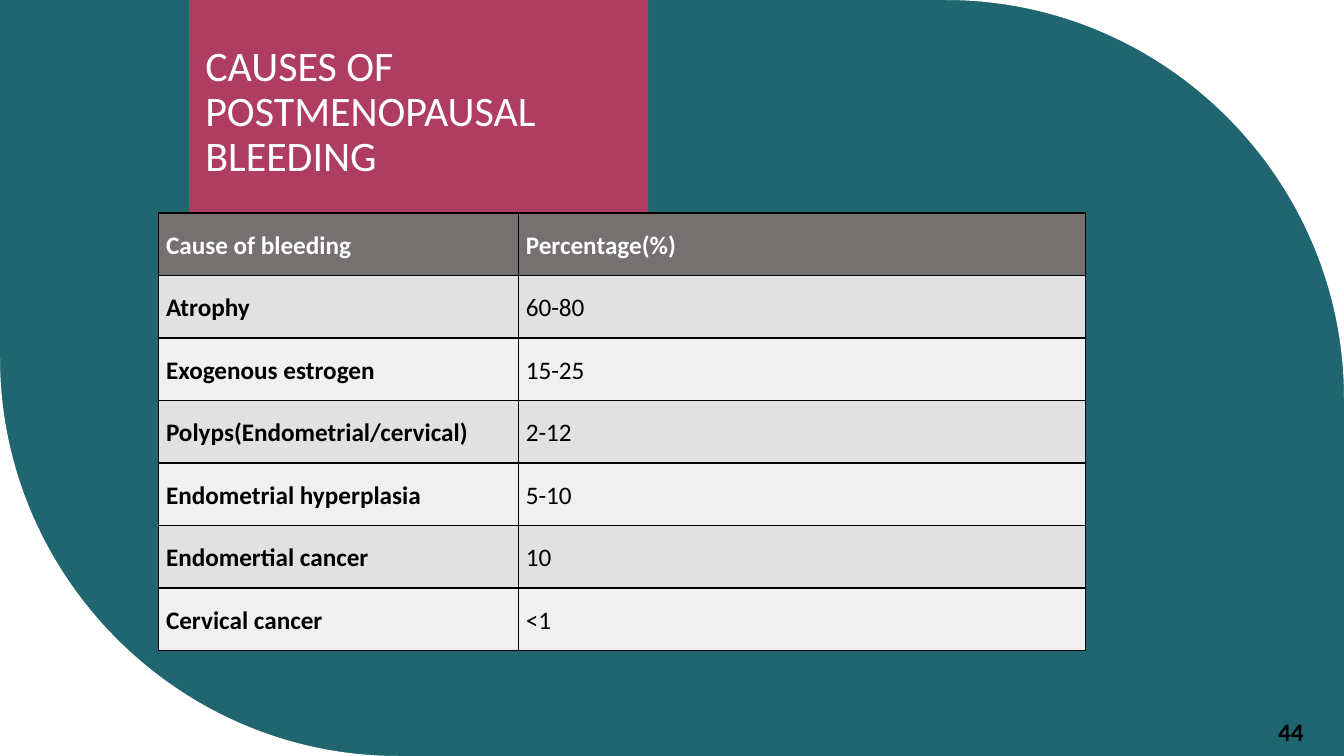
import pptx
import pptx.dml.color
import pptx.enum.shapes
import pptx.enum.text
import pptx.oxml
import pptx.oxml.ns
import pptx.util
import lxml.etree

Pt = pptx.util.Pt
RGBColor = pptx.dml.color.RGBColor
qn = pptx.oxml.ns.qn
MIDDLE = pptx.enum.text.MSO_ANCHOR.MIDDLE
TOP = pptx.enum.text.MSO_ANCHOR.TOP
LEFT = pptx.enum.text.PP_ALIGN.LEFT
CENTER = pptx.enum.text.PP_ALIGN.CENTER

TITLE = "CAUSES OF POSTMENOPAUSAL BLEEDING"
PAGE_NUMBER = "44"
CAUSES = [
    ("Cause of bleeding", "Percentage(%)"),
    ("Atrophy", "60-80"),
    ("Exogenous estrogen", "15-25"),
    ("Polyps(Endometrial/cervical)", "2-12"),
    ("Endometrial hyperplasia", "5-10"),
    ("Endomertial cancer", "10"),
    ("Cervical cancer", "<1"),
]

FONT = "Calibri"
TEAL = RGBColor(0x20, 0x66, 0x70)
ROSE = RGBColor(0xAF, 0x3D, 0x61)
HEADER_GREY = RGBColor(0x76, 0x71, 0x71)
BANDS = (RGBColor(0xF0, 0xF0, 0xF0), RGBColor(0xE1, 0xE1, 0xE1))
WHITE = RGBColor(0xFF, 0xFF, 0xFF)
BLACK = RGBColor(0, 0, 0)

SLIDE_W, SLIDE_H = 960, 540
CORNER_RADIUS = 284.4
CURVE_PULL = 0.45
COLUMN_WIDTHS = (257, 405.4)
ROW_H = 44.65
BORDER = (
    '<a:{side} xmlns:a="http://schemas.openxmlformats.org/drawingml/2006/main" w="12700">'
    '<a:solidFill><a:srgbClr val="000000"/></a:solidFill></a:{side}>'
)


def write(frame, text, size, color, bold=False, align=LEFT, spacing=0.9, anchor=MIDDLE):
    frame.word_wrap = True
    frame.vertical_anchor = anchor
    paragraph = frame.paragraphs[0]
    paragraph.alignment = align
    paragraph.line_spacing = spacing
    run = paragraph.add_run()
    run.text = text
    run.font.name = FONT
    run.font.size = Pt(size)
    run.font.bold = bold
    run.font.color.rgb = color
    return paragraph


def paint(shape, color):
    shape.shadow.inherit = False
    shape.fill.solid()
    shape.fill.fore_color.rgb = color
    shape.line.fill.background()


def add_corner(slide, corner_x, corner_y, inward_x, inward_y):
    reach_x, reach_y = inward_x * CORNER_RADIUS, inward_y * CORNER_RADIUS
    steps = [(1, 0), (CURVE_PULL, 0), (0, CURVE_PULL), (0, 1)]
    points = [(Pt(corner_x + reach_x * x), Pt(corner_y + reach_y * y)) for x, y in steps]
    outline = slide.shapes.build_freeform(Pt(corner_x), Pt(corner_y))
    outline.add_line_segments(points, close=True)
    corner = outline.convert_to_shape()
    paint(corner, WHITE)
    bends = list(corner._element.iter(qn("a:lnTo")))[1:4]
    curve = lxml.etree.Element(qn("a:cubicBezTo"))
    bends[0].addprevious(curve)
    for bend in bends:
        curve.append(bend[0])
        bend.getparent().remove(bend)


def add_causes_table(slide):
    table = slide.shapes.add_table(
        len(CAUSES), len(COLUMN_WIDTHS), Pt(113.2), Pt(152.2),
        Pt(sum(COLUMN_WIDTHS)), Pt(ROW_H * len(CAUSES))).table
    for column, width in zip(table.columns, COLUMN_WIDTHS):
        column.width = Pt(width)
    for row_index, row in enumerate(CAUSES):
        table.rows[row_index].height = Pt(ROW_H)
        header = row_index == 0
        for column_index, text in enumerate(row):
            cell = table.cell(row_index, column_index)
            cell.margin_left = cell.margin_right = Pt(5.4)
            cell.margin_top = cell.margin_bottom = Pt(0)
            cell.vertical_anchor = MIDDLE
            properties = cell._tc.get_or_add_tcPr()
            for side in ("lnL", "lnR", "lnT", "lnB"):
                properties.append(pptx.oxml.parse_xml(BORDER.format(side=side)))
            cell.fill.solid()
            cell.fill.fore_color.rgb = HEADER_GREY if header else BANDS[row_index % 2]
            paragraph = write(cell.text_frame, text, 18, WHITE if header else BLACK,
                              bold=header or column_index == 0, spacing=1.07)
            paragraph.space_after = Pt(8)


def main():
    deck = pptx.Presentation()
    deck.slide_width, deck.slide_height = Pt(SLIDE_W), Pt(SLIDE_H)
    slide = deck.slides.add_slide(deck.slide_layouts[6])
    slide.background.fill.solid()
    slide.background.fill.fore_color.rgb = TEAL

    add_corner(slide, SLIDE_W, 0, -1, 1)
    add_corner(slide, 0, SLIDE_H, 1, -1)

    title_panel = slide.shapes.add_shape(
        pptx.enum.shapes.MSO_SHAPE.RECTANGLE, Pt(135), Pt(0), Pt(328), Pt(152))
    paint(title_panel, ROSE)
    title = slide.shapes.add_textbox(Pt(139.6), Pt(21.9), Pt(319), Pt(117.4))
    write(title.text_frame, TITLE, 30, WHITE)

    add_causes_table(slide)

    page_number = slide.shapes.add_textbox(Pt(884.6), Pt(510.5), Pt(75), Pt(29.5))
    write(page_number.text_frame, PAGE_NUMBER, 18, BLACK, bold=True, align=CENTER, anchor=TOP)
    deck.save("out.pptx")


if __name__ == "__main__":
    main()
